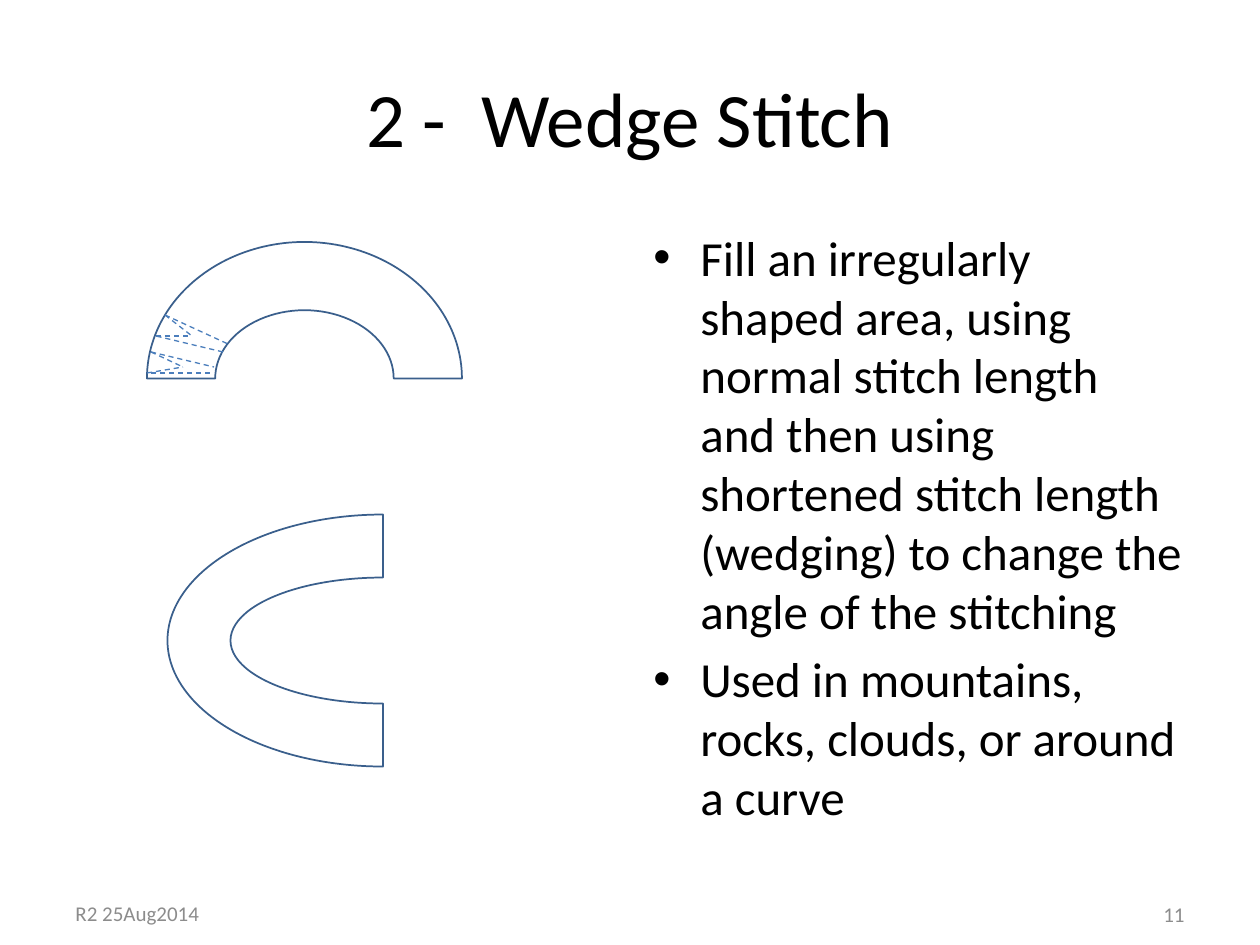
from lxml import etree
from pptx import Presentation, util as u
from pptx.dml.color import RGBColor
from pptx.enum import dml, shapes, text
from pptx.oxml import ns

PX_PER_INCH = 126
BLACK = RGBColor(0x00, 0x00, 0x00)
GREY = RGBColor(0x8C, 0x8C, 0x8C)
OUTLINE = RGBColor(0x3A, 0x5F, 0x8C)
STITCH = RGBColor(0x4B, 0x7E, 0xBC)

BULLETS = [
    "Fill an irregularly shaped area, using normal stitch length and then "
    "using shortened stitch length (wedging) to change the angle of the stitching",
    "Used in mountains, rocks, clouds, or around a curve",
]
# Each stitch runs from one point to another: x1, y1, x2, y2
STITCHES = [
    (210, 373, 147, 373),
    (151, 352, 214, 367),
    (147, 373, 183, 367),
    (151, 352, 183, 367),
    (223, 352, 156, 336),
    (165, 315, 228, 344),
    (156, 336, 189, 336),
    (165, 315, 192, 336),
]


def px(*lengths):
    return [u.Emu(round(n * 914400 / PX_PER_INCH)) for n in lengths]


def add_bullet(p, indent):
    pPr = p._p.get_or_add_pPr()
    pPr.set("marL", str(indent))
    pPr.set("indent", str(-indent))
    etree.SubElement(pPr, ns.qn("a:buFont")).set("typeface", "Arial")
    etree.SubElement(pPr, ns.qn("a:buChar")).set("char", "•")


def add_text(slide, box, paragraphs, size, color=BLACK, align=text.PP_ALIGN.LEFT,
             anchor=text.MSO_ANCHOR.MIDDLE, bullets=False):
    tf = slide.shapes.add_textbox(*px(*box)).text_frame
    tf.word_wrap = True
    tf.vertical_anchor = anchor
    for i, content in enumerate(paragraphs):
        p = tf.add_paragraph() if i else tf.paragraphs[0]
        p.alignment = align
        if bullets:
            p.space_before = u.Pt(size * 0.2)
            add_bullet(p, px(47)[0])
        r = p.add_run()
        r.text = content
        r.font.name = "Calibri"
        r.font.size = u.Pt(size)
        r.font.color.rgb = color


def add_arc(slide, box, rotation=0):
    sp = slide.shapes.add_shape(shapes.MSO_SHAPE.BLOCK_ARC, *px(*box))
    sp.rotation = rotation
    sp.shadow.inherit = False
    sp.fill.background()
    sp.line.color.rgb = OUTLINE
    sp.line.width = u.Pt(1)


def add_stitch(slide, ends):
    line = slide.shapes.add_connector(shapes.MSO_CONNECTOR.STRAIGHT, *px(*ends))
    line.line.color.rgb = STITCH
    line.line.width = u.Pt(0.75)
    line.line.dash_style = dml.MSO_LINE.DASH
    etree.SubElement(line._element.spPr, ns.qn("a:effectLst"))


def main():
    prs = Presentation()
    prs.slide_width, prs.slide_height = px(1260, 945)
    s = prs.slides.add_slide(prs.slide_layouts[6])

    add_text(s, (63, 38, 1134, 157), ["2 -  Wedge Stitch"], 44,
             align=text.PP_ALIGN.CENTER)
    add_text(s, (641, 221, 555, 624), BULLETS, 28,
             anchor=text.MSO_ANCHOR.TOP, bullets=True)

    add_arc(s, (147, 242, 315, 273))
    add_arc(s, (257, 425, 252, 431), rotation=270)
    for ends in STITCHES:
        add_stitch(s, ends)

    add_text(s, (903, 903, 294, 23), ["11"], 12, GREY, text.PP_ALIGN.RIGHT)
    add_text(s, (63, 902, 294, 22), ["R2 25Aug2014"], 12, GREY)
    prs.save("out.pptx")


if __name__ == "__main__":
    main()
